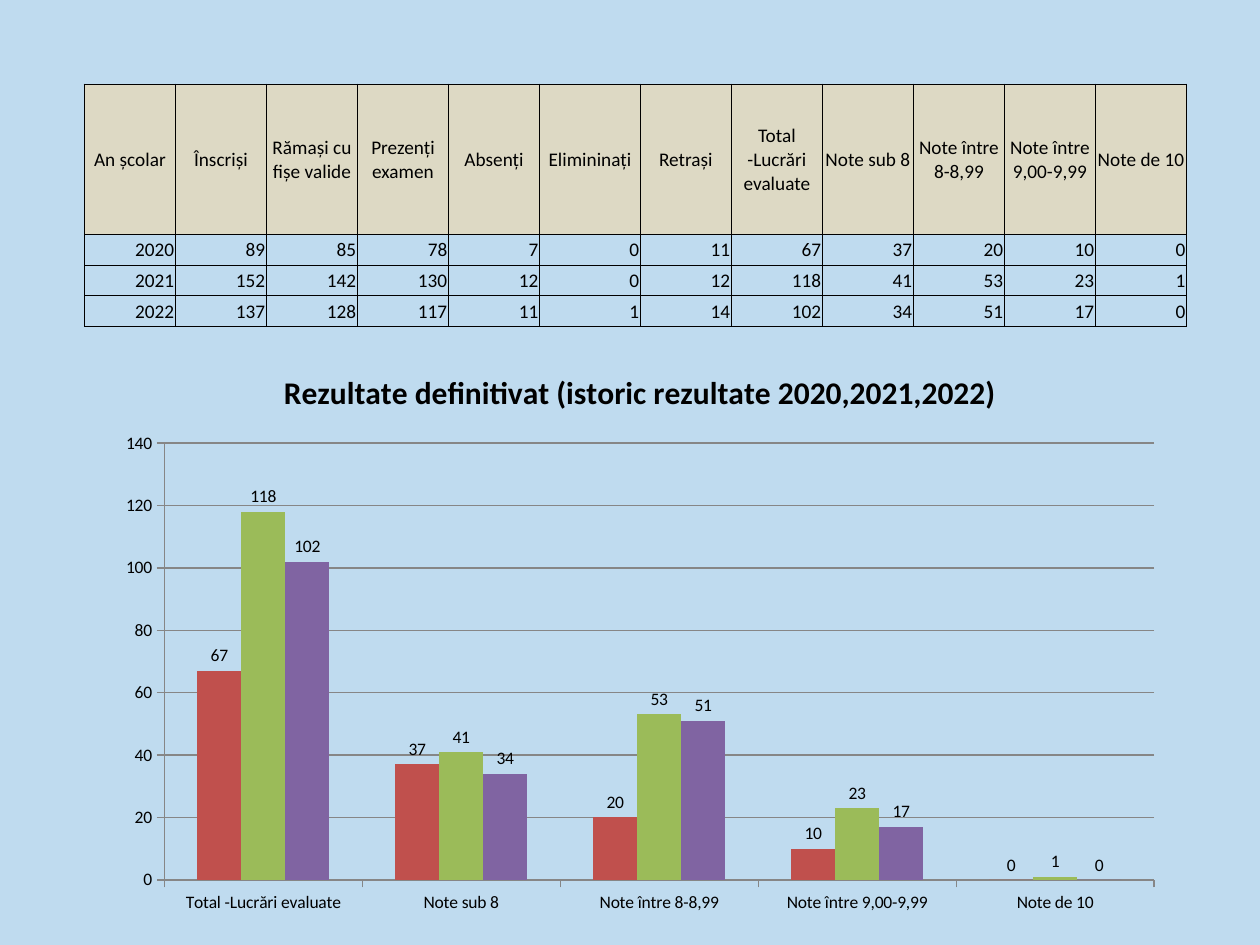
import pptx
import pptx.chart.data
import pptx.dml.color
import pptx.enum.chart
import pptx.enum.text
import pptx.oxml
import pptx.oxml.ns
import pptx.util
from lxml import etree
from pptx.util import Inches

# Content
HEADERS = ["An școlar", "Înscriși", "Rămași cu fișe valide", "Prezenți examen",
           "Absenți", "Elimininați", "Retrași", "Total -Lucrări evaluate",
           "Note sub 8", "Note între 8-8,99", "Note între 9,00-9,99", "Note de 10"]
RESULTS = [
    [2020, 89, 85, 78, 7, 0, 11, 67, 37, 20, 10, 0],
    [2021, 152, 142, 130, 12, 0, 12, 118, 41, 53, 23, 1],
    [2022, 137, 128, 117, 11, 1, 14, 102, 34, 51, 17, 0],
]
CHART_TITLE = "Rezultate definitivat (istoric rezultate 2020,2021,2022)"
FIRST_CHARTED = HEADERS.index("Total -Lucrări evaluate")
WIDE_COLUMN = HEADERS.index("Elimininați")

THEME = {
    "font": "Calibri", "text": "000000", "border": "000000",
    "background": "0070C0", "background_alpha": 25, "header": "DDD9C4",
    "axis": "868686", "series": ["C0504D", "9BBB59", "8064A2"],
    "table_size": 11, "chart_size": 10, "title_size": 18,
    "thin": 0.5, "thick": 1, "axis_width": 0.75,
}

# Geometry in inches: left, top, width, height
TABLE_BOX = (0.67, 0.67, 8.75, 1.92)
CHART_BOX = (0.83, 2.75, 8.5, 4.58)
WIDE_WIDTH = 0.8
HEADER_HEIGHT = 1.19


def rgb(value):
    return pptx.dml.color.RGBColor.from_string(value)


def set_font(font, size, bold=False):
    font.name = THEME["font"]
    font.size = pptx.util.Pt(size)
    font.bold = bold
    font.color.rgb = rgb(THEME["text"])


def set_background(s):
    fill = s.background.fill
    fill.solid()
    fill.fore_color.rgb = rgb(THEME["background"])
    color = s.element.find(".//" + pptx.oxml.ns.qn("a:srgbClr"))
    alpha = etree.SubElement(color, pptx.oxml.ns.qn("a:alpha"))
    alpha.set("val", str(THEME["background_alpha"] * 1000))


def set_borders(cell, widths):
    tc_pr = cell._tc.get_or_add_tcPr()
    for i, (side, width) in enumerate(zip("LRTB", widths)):
        tc_pr.insert(i, pptx.oxml.parse_xml(
            f'<a:ln{side} {pptx.oxml.ns.nsdecls("a")} w="{pptx.util.Pt(width)}">'
            f'<a:solidFill><a:srgbClr val="{THEME["border"]}"/></a:solidFill>'
            f'</a:ln{side}>'))


def fill_cell(cell, text, is_header):
    align = pptx.enum.text.PP_ALIGN
    thin, thick = THEME["thin"], THEME["thick"]
    cell.margin_left = cell.margin_right = cell.margin_top = Inches(0.01)
    cell.margin_bottom = 0
    cell.vertical_anchor = pptx.enum.text.MSO_ANCHOR.MIDDLE
    p = cell.text_frame.paragraphs[0]
    p.alignment = align.CENTER if is_header else align.RIGHT
    r = p.add_run()
    r.text = str(text)
    set_font(r.font, THEME["table_size"])
    if is_header:
        cell.fill.solid()
        cell.fill.fore_color.rgb = rgb(THEME["header"])
        set_borders(cell, (thick, thick, thick, thin))
    else:
        cell.fill.background()
        set_borders(cell, (thin,) * 4)


def add_results_table(s):
    rows = [HEADERS] + RESULTS
    _, _, width, height = TABLE_BOX
    table = s.shapes.add_table(len(rows), len(HEADERS), *map(Inches, TABLE_BOX)).table
    table.first_row = table.horz_banding = False
    narrow = (width - WIDE_WIDTH) / (len(HEADERS) - 1)
    for i, column in enumerate(table.columns):
        column.width = Inches(WIDE_WIDTH if i == WIDE_COLUMN else narrow)
    row_height = (height - HEADER_HEIGHT) / len(RESULTS)
    for i, values in enumerate(rows):
        table.rows[i].height = Inches(row_height if i else HEADER_HEIGHT)
        for j, value in enumerate(values):
            fill_cell(table.cell(i, j), value, i == 0)


def style_line(line):
    line.color.rgb = rgb(THEME["axis"])
    line.width = pptx.util.Pt(THEME["axis_width"])


def add_results_chart(s):
    enums = pptx.enum.chart
    data = pptx.chart.data.CategoryChartData()
    data.categories = HEADERS[FIRST_CHARTED:]
    for i, row in enumerate(RESULTS, 1):
        data.add_series(f"Series {i}", row[FIRST_CHARTED:])
    chart = s.shapes.add_chart(enums.XL_CHART_TYPE.COLUMN_CLUSTERED,
                               *map(Inches, CHART_BOX), data).chart
    set_font(chart.font, THEME["chart_size"])
    chart.has_legend = False

    # Title
    chart.has_title = True
    r = chart.chart_title.text_frame.paragraphs[0].add_run()
    r.text = CHART_TITLE
    set_font(r.font, THEME["title_size"], bold=True)
    chart.chart_title.include_in_layout = False

    # Axes
    for axis in (chart.category_axis, chart.value_axis):
        axis.major_tick_mark = enums.XL_TICK_MARK.OUTSIDE
        axis.minor_tick_mark = enums.XL_TICK_MARK.NONE
        style_line(axis.format.line)
    chart.value_axis.has_major_gridlines = True
    style_line(chart.value_axis.major_gridlines.format.line)

    # Columns and value labels
    plot = chart.plots[0]
    plot.gap_width = 150
    plot.overlap = 0
    plot.vary_by_categories = False
    for series, color in zip(plot.series, THEME["series"]):
        series.format.fill.solid()
        series.format.fill.fore_color.rgb = rgb(color)
        labels = series.data_labels
        labels.show_value = True
        labels.position = enums.XL_LABEL_POSITION.OUTSIDE_END
        set_font(labels.font, THEME["chart_size"])


def main():
    prs = pptx.Presentation()
    prs.slide_width, prs.slide_height = Inches(10), Inches(7.5)
    s = prs.slides.add_slide(prs.slide_layouts.get_by_name("Blank"))
    set_background(s)
    add_results_chart(s)
    add_results_table(s)
    prs.save("out.pptx")


if __name__ == "__main__":
    main()
